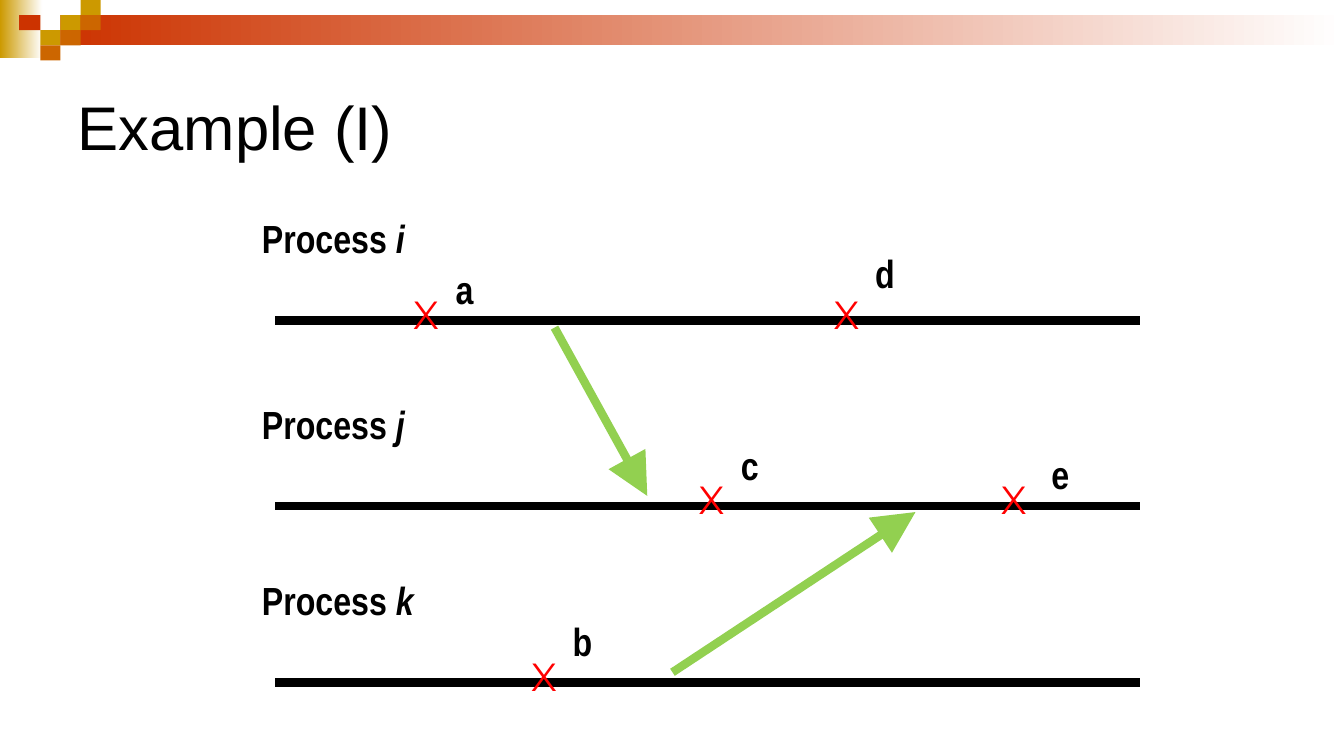
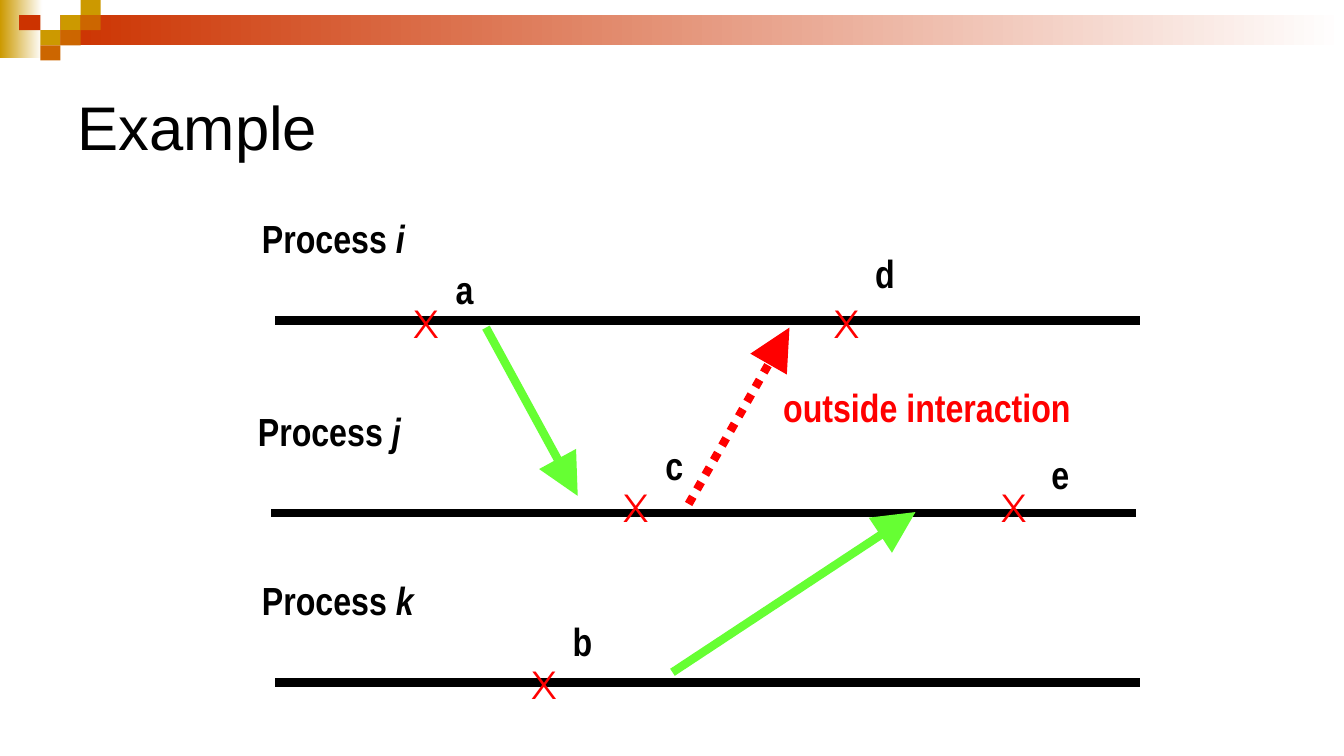
import pptx
import pptx.dml.color
import pptx.enum.dml
import pptx.enum.shapes
import pptx.enum.text
import pptx.oxml.ns
import pptx.util
from lxml import etree

PX = 9144  # EMU; 100 px to the inch
COLORS = {
    "black": "000000", "white": "FFFFFF", "red": "FF0000",
    "gold": "CC9900", "brick": "CC3300", "orange": "CC6600",
    "olive_green": "92D050", "bright_green": "66FF33",
}
TEXT_FONT, MARK_FONT = "Arial Narrow", "Montserrat"
TEXT_HEIGHT = 57
LINE_LENGTH = 850

FADES = [(0, 0, 42, 58, "gold"), (60, 15, 1273, 30, "brick")]
TILES = [
    (60, 15, 20, "gold"), (80, 0, 20, "gold"), (80, 15, 20, "orange"),
    (40, 30, 20, "gold"), (19, 15, 21, "brick"), (60, 30, 20, "orange"),
    (40, 45, 20, "orange"),
]
TILE_HEIGHT = 15

# Event labels that stand in the same place on both slides
LABELS = {"a": (442, 258), "b": (558, 608), "d": (858, 242), "e": (1033, 442)}


def px(*lengths):
    return [pptx.util.Emu(n * PX) for n in lengths]


def rgb(name):
    return pptx.dml.color.RGBColor.from_string(COLORS[name])


def qn(tag):
    return pptx.oxml.ns.qn(tag)


def add_rect(shapes, x, y, w, h, color, fades=False):
    sp = shapes.add_shape(pptx.enum.shapes.MSO_SHAPE.RECTANGLE, *px(x, y, w, h))
    sp.shadow.inherit = False
    sp.line.fill.background()
    if fades:
        sp.fill.gradient()
        sp.fill.gradient_angle = 0
        for stop, name in zip(sp.fill.gradient_stops, (color, "white")):
            stop.color.rgb = rgb(name)
    else:
        sp.fill.solid()
        sp.fill.fore_color.rgb = rgb(color)


def add_band(s):
    """Build the header band and hand it to the layout, which all slides share."""
    band = s.shapes.add_group_shape()
    for x, y, w, h, color in FADES:
        add_rect(band.shapes, x, y, w, h, color, fades=True)
    for x, y, w, color in TILES:
        add_rect(band.shapes, x, y, w, TILE_HEIGHT, color)
    for number, props in enumerate(band.element.iter(qn("p:cNvPr")), 100):
        props.set("id", str(number))
    s.slide_layout.element.cSld.spTree.append(band.element)


def place_title(layout):
    title = layout.placeholders[0]
    title.left, title.top, title.width, title.height = px(67, 50, 1200, 150)


def add_slide(prs, layout, title):
    s = prs.slides.add_slide(layout)
    tf = s.shapes.title.text_frame
    tf.text = title
    tf.vertical_anchor = pptx.enum.text.MSO_ANCHOR.MIDDLE
    p = tf.paragraphs[0]
    p.alignment = pptx.enum.text.PP_ALIGN.LEFT
    p.font.name, p.font.size = "Arial", pptx.util.Pt(44)
    p.font.color.rgb = rgb("black")
    return s


def add_text(s, text, x, y, w, color="black", font=TEXT_FONT, bold=True):
    tf = s.shapes.add_textbox(*px(x, y, w, TEXT_HEIGHT)).text_frame
    tf.word_wrap = True
    p = tf.paragraphs[0]
    p.add_run().text = text
    p.font.name, p.font.size, p.font.bold = font, pptx.util.Pt(28), bold
    p.font.color.rgb = rgb(color)
    return p


def add_line(s, start, end, color):
    line = s.shapes.add_connector(
        pptx.enum.shapes.MSO_CONNECTOR.STRAIGHT, *px(*start, *end))
    line.line.color.rgb = rgb(color)
    line.line.width = pptx.util.Pt(6)
    etree.SubElement(line.element.spPr, qn("a:effectLst"))
    return line


def add_arrow(s, start, end, color, dotted=False):
    arrow = add_line(s, start, end, color)
    if dotted:
        arrow.line.dash_style = pptx.enum.dml.MSO_LINE.ROUND_DOT
    ln = arrow.element.spPr.find(qn("a:ln"))
    etree.SubElement(ln, qn("a:tailEnd"), type="triangle", w="lg", len="lg")


def add_process(s, name, x, y):
    """Draw a time line starting at x, y with its process name above."""
    p = add_text(s, "Process ", x - 27, y - 110, 200)
    r = p.add_run()
    r.text = name
    r.font.italic = True
    line = add_line(s, (x, y), (x + LINE_LENGTH, y), "black")
    line.element.spPr.find(qn("a:ln")).set("cap", "sq")


def add_diagram(s, processes, marks, c_label, arrows, arrow_color):
    for name, (x, y) in processes.items():
        add_process(s, name, x, y)
    for x, y in marks:
        add_text(s, "X", x, y, 50, "red", MARK_FONT, bold=False)
    for start, end in arrows:
        add_arrow(s, start, end, arrow_color)
    for name, (x, y) in {**LABELS, "c": c_label}.items():
        add_text(s, name, x, y, 42)


def main():
    prs = pptx.Presentation()
    prs.slide_width, prs.slide_height = px(1333, 750)
    layout = prs.slide_layouts.get_by_name("Title Only")
    place_title(layout)
    k_to_j = ((667, 667), (908, 508))

    s = add_slide(prs, layout, "Example (I)")
    add_band(s)
    add_diagram(
        s,
        processes={"i": (277, 318), "j": (277, 502), "k": (277, 677)},
        marks=[(400, 283), (683, 467), (517, 642), (817, 283), (983, 467)],
        c_label=(725, 433),
        arrows=[((550, 325), (642, 492)), k_to_j],
        arrow_color="olive_green")

    s = add_slide(prs, layout, "Example")
    add_diagram(
        s,
        processes={"i": (277, 318), "j": (273, 509), "k": (277, 677)},
        marks=[(400, 292), (608, 475), (517, 650), (817, 292), (983, 475)],
        c_label=(650, 433),
        arrows=[((482, 325), (573, 492)), k_to_j],
        arrow_color="bright_green")
    add_arrow(s, (683, 500), (783, 325), "red", dotted=True)
    add_text(s, "outside interaction", 767, 375, 333, "red")

    prs.save("out.pptx")


if __name__ == "__main__":
    main()
